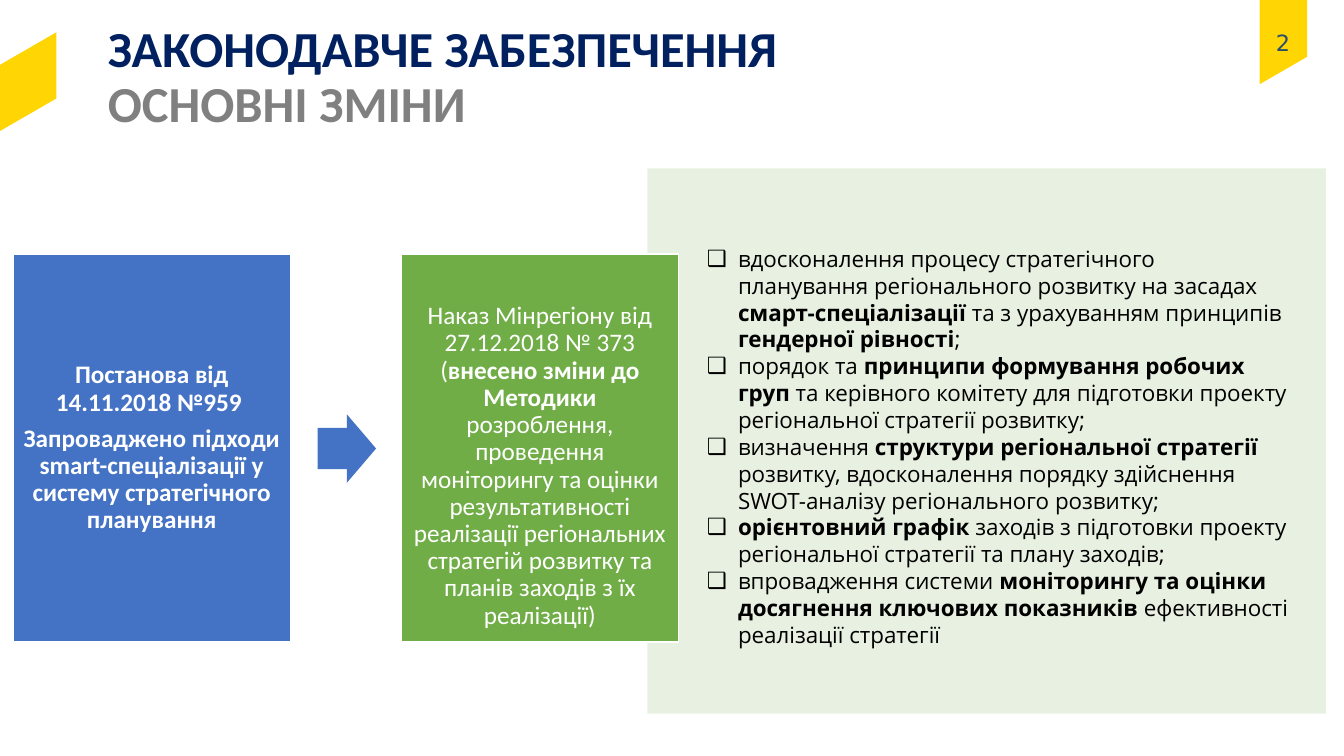
import pptx
import pptx.util
import pptx.dml.color
import pptx.enum.shapes
import pptx.enum.text
import pptx.oxml.ns
import lxml.etree

Inches, Pt = pptx.util.Inches, pptx.util.Pt
SHAPE = pptx.enum.shapes.MSO_SHAPE
ALIGN = pptx.enum.text.PP_ALIGN
ANCHOR = pptx.enum.text.MSO_ANCHOR
COLORS = {"navy": "002060", "gray": "808080", "gold": "FFD503", "slate": "274D6F",
          "blue": "4472C4", "green": "70AD47", "white": "FFFFFF", "black": "000000"}


def hue(name):
    return pptx.dml.color.RGBColor.from_string(COLORS[name])


def child(node, tag, **attrs):
    return lxml.etree.SubElement(node, pptx.oxml.ns.qn(tag), **attrs)


class Deck:
    def __init__(self):
        self.file = pptx.Presentation()
        self.file.slide_width, self.file.slide_height = Inches(13.33), Inches(7.5)
        self.slide = self.file.slides.add_slide(self.file.slide_layouts[1])
        self.shapes = self.slide.shapes

    def place(self, shape, left, top, width, height):
        area = {"left": left, "top": top, "width": width, "height": height}
        for key, value in area.items():
            setattr(shape, key, Inches(value))

    def frame(self, shape, inset=(0.1, 0.05, 0.1, 0.05), anchor=ANCHOR.TOP):
        left, top, right, bottom = map(Inches, inset)
        style = {"word_wrap": True, "auto_size": pptx.enum.text.MSO_AUTO_SIZE.NONE,
                 "vertical_anchor": anchor, "margin_left": left, "margin_top": top,
                 "margin_right": right, "margin_bottom": bottom}
        for key, value in style.items():
            setattr(shape.text_frame, key, value)
        return shape.text_frame

    def run(self, para, text, font, size, color, bold=False):
        run = para.add_run()
        run.text = text
        style = {"name": font, "size": Pt(size), "bold": bold}
        for key, value in style.items():
            setattr(run.font, key, value)
        run.font.color.rgb = hue(color)

    def fill(self, frame, lines, font, size, color, align=ALIGN.LEFT, space=0.9, after=0):
        """Write one paragraph per line; ** switches bold on and off."""
        style = {"alignment": align, "line_spacing": space,
                 "space_before": Pt(0), "space_after": Pt(after)}
        for i, line in enumerate(lines):
            para = frame.add_paragraph() if i else frame.paragraphs[0]
            for key, value in style.items():
                setattr(para, key, value)
            for j, part in enumerate(line.split("**")):
                if part:
                    self.run(para, part, font, size, color, j % 2 == 1)

    def shape(self, kind, area, color, edge=None, adjust=()):
        shape = self.shapes.add_shape(kind, *map(Inches, area))
        shape.shadow.inherit = False
        shape.fill.solid()
        shape.fill.fore_color.rgb = hue(color)
        if edge:
            shape.line.color.rgb, shape.line.width = hue(edge), Pt(1)
        else:
            shape.line.fill.background()
        for i, value in enumerate(adjust):
            shape.adjustments[i] = value
        return shape

    def panel(self, area, color, alpha):
        shape = self.shape(SHAPE.RECTANGLE, area, color)
        tint = shape._element.spPr.find(".//" + pptx.oxml.ns.qn("a:srgbClr"))
        child(tint, "a:alpha", val=str(alpha * 1000))
        self.shapes._spTree.insert(2, shape._element)  # behind the placeholders

    def ribbon(self, area):
        shape = self.shape(SHAPE.PARALLELOGRAM, area, "gold", adjust=[0.578])
        shape.rotation = 90
        shape._element.spPr.xfrm.set("flipH", "1")

    def card(self, area, color, lines, top=0.07):
        shape = self.shape(SHAPE.RECTANGLE, area, color, "white")
        frame = self.frame(shape, (0.07, top, 0.07, 0.07), ANCHOR.MIDDLE)
        self.fill(frame, lines, "Calibri", 18, "white", ALIGN.CENTER, after=6.3)

    def title(self, area, lead, rest):
        shape = self.shapes.title
        self.place(shape, *area)
        frame = self.frame(shape)
        self.fill(frame, [f"**{lead}**"], "Calibri", 36, "navy")
        para = frame.paragraphs[0]
        para.add_line_break()
        self.run(para, rest, "Calibri", 36, "gray", True)

    def list(self, area, lines):
        shape = self.slide.placeholders[1]
        self.place(shape, *area)
        frame = self.frame(shape)
        self.fill(frame, lines, "Open Sans", 16, "black", space=1.0)
        indent = Inches(0.31)
        for para in frame.paragraphs:
            props = para._p.get_or_add_pPr()
            props.set("marL", str(indent))
            props.set("indent", str(-indent))
            child(props, "a:buChar", char="❑")

    def label(self, area, text):
        box = self.shapes.add_textbox(*map(Inches, area))
        frame = self.frame(box, (0, 0, 0, 0))
        self.fill(frame, [text], "DejaVu Sans", 16, "slate", ALIGN.CENTER, after=6)


def main():
    deck = Deck()

    # Heading and ribbons
    deck.title((0.97, 0.19, 11.39, 0.69), "ЗАКОНОДАВЧЕ ЗАБЕЗПЕЧЕННЯ", "ОСНОВНІ ЗМІНИ")
    deck.ribbon((-0.21, 0.53, 0.98, 0.56))
    deck.ribbon((12.16, 0.03, 1.14, 0.47))
    deck.label((12.49, 0.32, 0.47, 0.36), "2")

    # Main changes
    deck.panel((6.42, 1.67, 6.73, 5.41), "green", 16)
    deck.list((6.91, 2.38, 5.97, 4.14), [
        "вдосконалення процесу стратегічного планування регіонального розвитку на засадах "
        "**смарт-спеціалізації** та з урахуванням принципів **гендерної рівності**;",
        "порядок та **принципи формування робочих груп **та керівного комітету "
        "для підготовки проекту регіональної стратегії розвитку;",
        "визначення **структури регіональної стратегії **розвитку, вдосконалення "
        "порядку здійснення SWOT-аналізу регіонального розвитку;",
        "**орієнтовний графік **заходів з підготовки проекту "
        "регіональної стратегії та плану заходів;",
        "впровадження системи **моніторингу та оцінки досягнення ключових показників "
        "**ефективності реалізації стратегії",
    ])

    # Two acts joined by an arrow
    deck.card((0.13, 2.52, 2.75, 3.85), "blue", [
        "**Постанова від 14.11.2018 №959 **",
        "**Запроваджено підходи smart-спеціалізації у систему стратегічного планування**",
    ])
    deck.shape(SHAPE.RIGHT_ARROW, (3.15, 4.11, 0.58, 0.68), "blue", adjust=[0.6, 0.5])
    deck.card((3.98, 2.52, 2.75, 3.85), "green", [
        "Наказ Мінрегіону від 27.12.2018 № 373 (**внесено зміни до Методики** "
        "розроблення, проведення моніторингу та оцінки результативності реалізації "
        "регіональних стратегій розвитку та планів заходів з їх реалізації)",
    ], top=0.43)

    deck.file.save("out.pptx")


if __name__ == "__main__":
    main()
